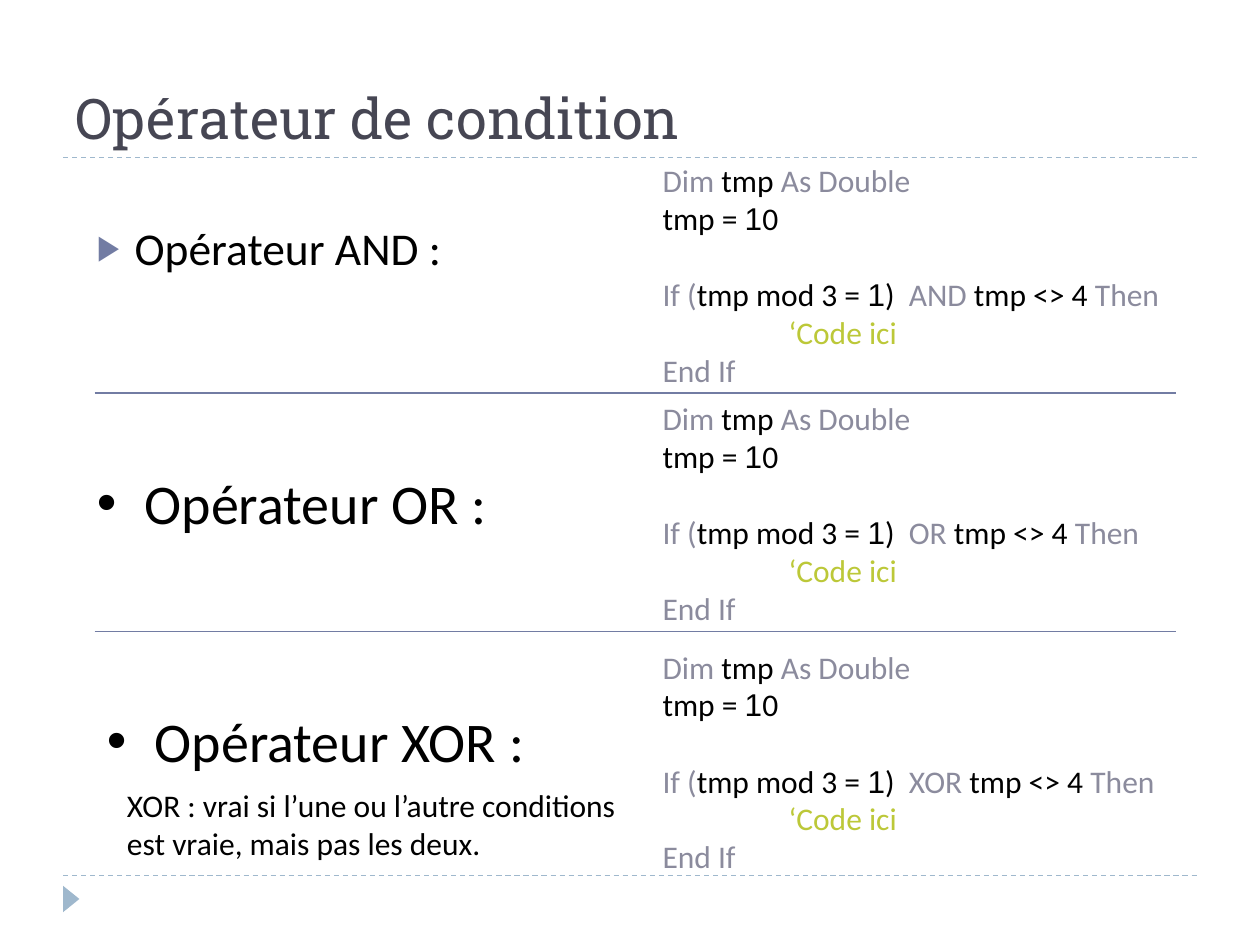
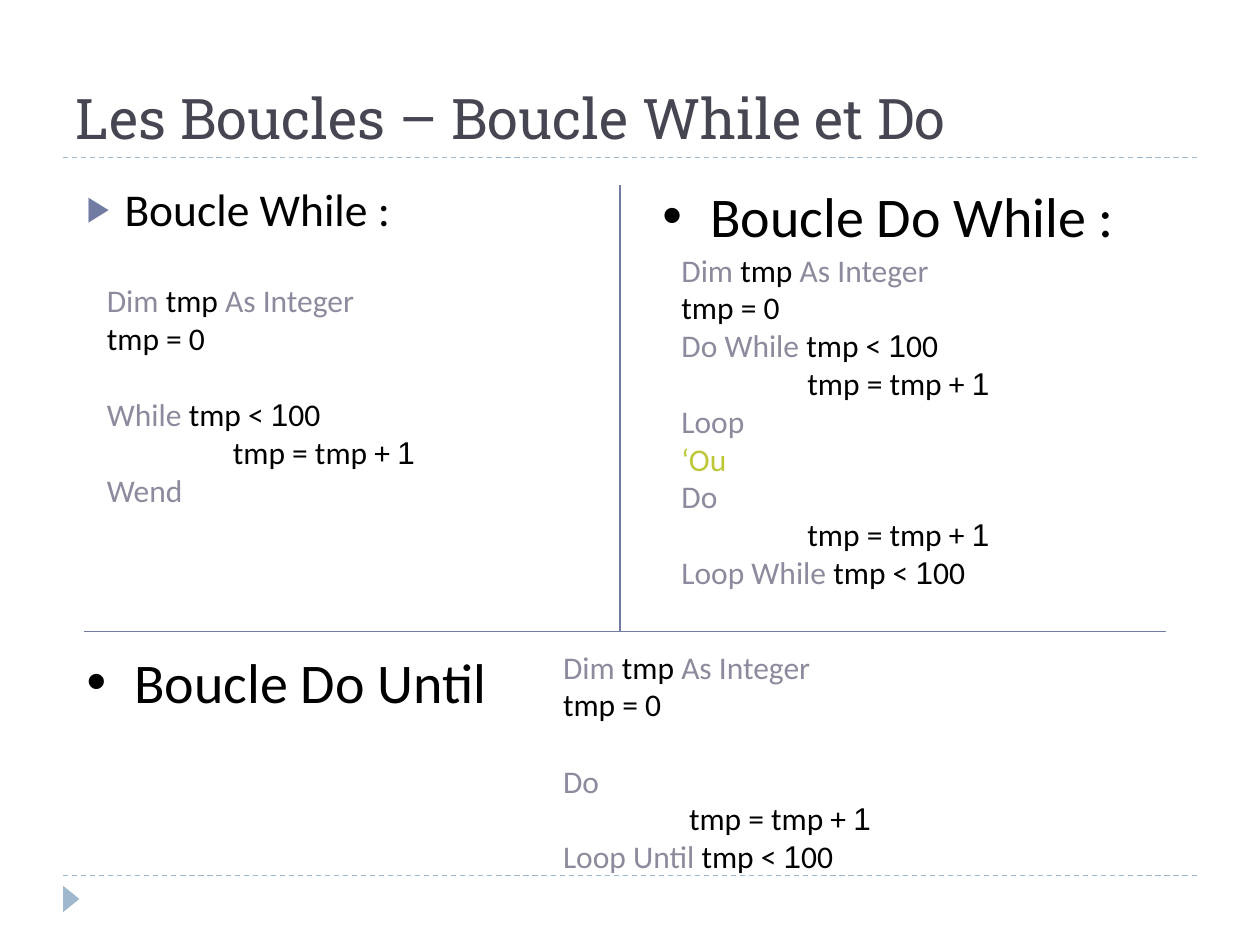
import itertools

import pptx
import pptx.dml.color
import pptx.enum.dml
import pptx.enum.shapes
import pptx.enum.text
import pptx.oxml
import pptx.oxml.ns
import pptx.util
from lxml import etree

RGB = pptx.dml.color.RGBColor
TITLE_COLOR = RGB(0x46, 0x46, 0x53)
PLAIN = RGB(0x00, 0x00, 0x00)
KEYWORD = RGB(0x8B, 0x8B, 0x9D)
COMMENT = RGB(0xBC, 0xC8, 0x38)
ACCENT = RGB(0x72, 0x7C, 0xA3)
FRAME = RGB(0x9F, 0xB8, 0xCD)

TITLE_FONT, BODY_FONT, DIGIT_FONT = "Roboto Slab", "Calibri", "Arial"
CODE_SIZE = 18
CODE_LINE = 22  # height in points of one line of code

# Square grid: 100 columns by 75 rows
COLS, ROWS = 100, 75
UNIT = pptx.util.Inches(0.1)

ARROW_BULLET = {"char": "▶", "indent": 3, "size": 26, "color": ACCENT, "percent": 76}
DOT_BULLET = {"char": "•", "indent": 3.8, "size": 32, "color": PLAIN, "percent": 100}


def grid(*cells):
    return [round(c * UNIT) for c in cells]


def code_line(*runs, indent=0, gap=False):
    """A line of code: (text, colour) runs, tab stops, blank line above or not."""
    return {"runs": runs, "indent": indent, "gap": gap}


def declaration(type_name):
    return code_line(("Dim ", KEYWORD), ("tmp ", PLAIN), ("As " + type_name, KEYWORD))


def assignment(value):
    return code_line((f"tmp = {value}", PLAIN))


def keyword(text, gap=False):
    return code_line((text, KEYWORD), gap=gap)


def loop_test(text, gap=False):
    return code_line((text + " ", KEYWORD), ("tmp < 100", PLAIN), gap=gap)


def increment():
    return code_line(("tmp = tmp + 1", PLAIN), indent=1)


def add_run(p, text, size, color, font=BODY_FONT):
    r = p.add_run()
    r.text = text
    formats = {"name": font, "size": pptx.util.Pt(size)}
    for name, value in formats.items():
        setattr(r.font, name, value)
    r.font.color.rgb = color


def add_text_box(s, left, top, width, height):
    tf = s.shapes.add_textbox(*grid(left, top, width, height)).text_frame
    tf.word_wrap = True
    return tf


def add_title(s, text):
    sp = s.shapes.title
    box = zip(("left", "top", "width", "height"), grid(5, 1.7, 90, 10.8))
    for name, value in box:
        setattr(sp, name, value)
    tf = sp.text_frame
    tf.vertical_anchor = pptx.enum.text.MSO_ANCHOR.BOTTOM
    p = tf.paragraphs[0]
    p.alignment = pptx.enum.text.PP_ALIGN.LEFT
    add_run(p, text, 32, TITLE_COLOR, TITLE_FONT)


def add_heading(s, text, left, top, width, bullet):
    p = add_text_box(s, left, top, width, 6.6).paragraphs[0]
    p.space_before = pptx.util.Pt(6)
    add_run(p, text, bullet["size"], PLAIN)
    pPr = p._p.get_or_add_pPr()
    indent = grid(bullet["indent"])[0]
    pPr.set("marL", str(indent))
    pPr.set("indent", str(-indent))
    qn = pptx.oxml.ns.qn
    color = etree.SubElement(pPr, qn("a:buClr"))
    etree.SubElement(color, qn("a:srgbClr"), val=str(bullet["color"]))
    etree.SubElement(pPr, qn("a:buSzPct"), val=str(bullet["percent"] * 1000))
    etree.SubElement(pPr, qn("a:buFont"), typeface="Arial")
    etree.SubElement(pPr, qn("a:buChar"), char=bullet["char"])


def add_code(s, lines, left, top, width, height=19.2):
    """Code block, with every digit 1 in its own font."""
    tf = add_text_box(s, left, top, width, height)
    for i, line in enumerate(lines):
        p = tf.add_paragraph() if i else tf.paragraphs[0]
        if line["gap"]:
            p.space_before = pptx.util.Pt(CODE_LINE)
        if line["indent"]:
            margin = pptx.util.Inches(line["indent"])
            p._p.get_or_add_pPr().set("marL", str(margin))
        for text, color in line["runs"]:
            for is_one, chars in itertools.groupby(text, lambda c: c == "1"):
                font = DIGIT_FONT if is_one else BODY_FONT
                add_run(p, "".join(chars), CODE_SIZE, color, font)


def add_line(s, x1, y1, x2, y2, color=ACCENT, dash=None):
    straight = pptx.enum.shapes.MSO_CONNECTOR.STRAIGHT
    cxn = s.shapes.add_connector(straight, *grid(x1, y1, x2, y2))
    cxn.line.color.rgb = color
    cxn.line.width = pptx.util.Pt(0.75)
    if dash:
        cxn.line.dash_style = dash
    etree.SubElement(cxn._element.spPr, pptx.oxml.ns.qn("a:effectLst"))


def add_frame(s):
    """Dashed rules and corner triangle shared by the slides."""
    for y in (69.5, 12.5):
        add_line(s, 5, y, 95, y, FRAME, pptx.enum.dml.MSO_LINE.DASH)
    triangle = pptx.enum.shapes.MSO_SHAPE.ISOSCELES_TRIANGLE
    sp = s.shapes.add_shape(triangle, *grid(4.6, 70.7, 2.1, 1.3))
    sp.rotation = 90
    sp.shadow.inherit = False
    sp.fill.solid()
    sp.fill.fore_color.rgb = FRAME
    sp.line.fill.background()


def new_slide(prs, title):
    s = prs.slides.add_slide(prs.slide_layouts.get_by_name("Title Only"))
    add_frame(s)
    add_title(s, title)
    return s


def condition_code(operator):
    return [
        declaration("Double"),
        assignment(10),
        code_line(("If (", KEYWORD), ("tmp mod 3 = 1)  ", PLAIN),
                  (operator + " ", KEYWORD), ("tmp <> 4 ", PLAIN),
                  ("Then", KEYWORD), gap=True),
        code_line(("‘Code ici", COMMENT), indent=1),
        keyword("End If"),
    ]


def build_conditions(prs):
    s = new_slide(prs, "Opérateur de condition")
    # operator, heading left, heading top, code top, bullet
    operators = [
        ("AND", 6.7, 17, 12.3, ARROW_BULLET),
        ("OR", 6.7, 36.7, 31.2, DOT_BULLET),
        ("XOR", 7.5, 55.6, 50.9, DOT_BULLET),
    ]
    for operator, left, top, code_top, bullet in operators:
        add_heading(s, f"Opérateur {operator} :", left, top, 90, bullet)
        add_code(s, condition_code(operator), 51.6, code_top, 46.5)
    for y in (31.2, 50.1):
        add_line(s, 7.5, y, 93.3, y)
    note = add_text_box(s, 9.1, 61.9, 41.7, 7.1)
    add_run(note.paragraphs[0], "XOR : vrai si l’une ou l’autre conditions "
            "est vraie, mais pas les deux.", CODE_SIZE, PLAIN)


def build_loops(prs):
    s = new_slide(prs, "Les Boucles – Boucle While et Do")
    start = [declaration("Integer"), assignment(0)]

    add_heading(s, "Boucle While :", 5.9, 13.9, 41.7, ARROW_BULLET)
    while_loop = [loop_test("While", gap=True), increment(), keyword("Wend")]
    add_code(s, start + while_loop, 7.5, 21.8, 40.9)

    add_heading(s, "Boucle Do While :", 51.6, 13.9, 45.7, DOT_BULLET)
    do_while = [
        loop_test("Do While"), increment(), keyword("Loop"),
        code_line(("‘Ou", COMMENT)),
        keyword("Do"), increment(), loop_test("Loop While"),
    ]
    add_code(s, start + do_while, 53.1, 19.4, 40.9, 28.3)

    add_heading(s, "Boucle Do Until", 5.9, 50.9, 41.7, DOT_BULLET)
    do_until = [keyword("Do", gap=True), increment(), loop_test("Loop Until")]
    add_code(s, start + do_until, 43.7, 50.9, 40.9)

    add_line(s, 49.2, 14.7, 49.2, 50.1)
    add_line(s, 6.7, 50.1, 92.5, 50.1)


def main():
    prs = pptx.Presentation()
    prs.slide_width, prs.slide_height = grid(COLS, ROWS)
    build_conditions(prs)
    build_loops(prs)
    prs.save("out.pptx")


if __name__ == "__main__":
    main()
